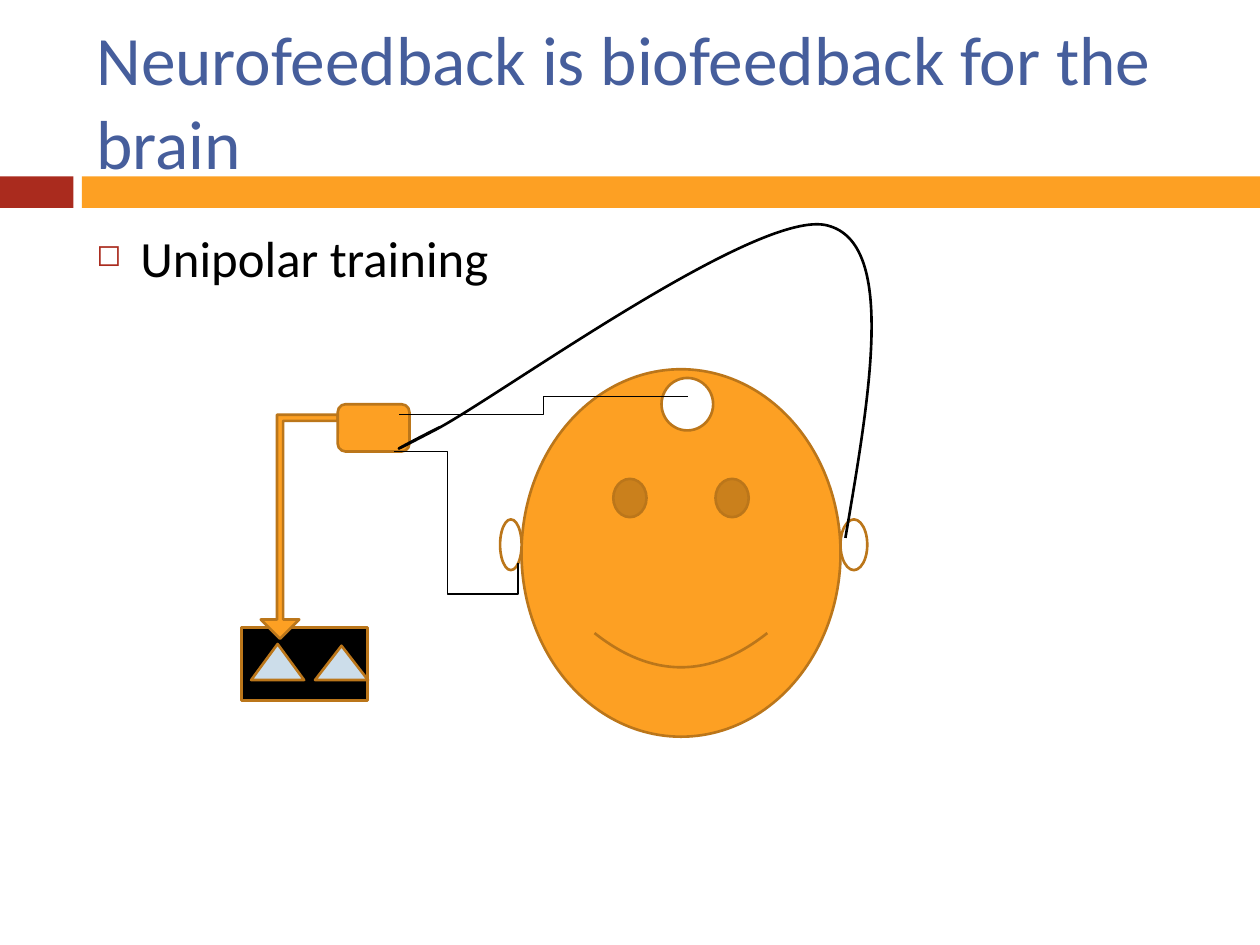
from dataclasses import dataclass

from lxml import etree
from pptx import Presentation
from pptx.dml.color import RGBColor
from pptx.enum.shapes import MSO_CONNECTOR, MSO_SHAPE
from pptx.enum.text import MSO_ANCHOR, PP_ALIGN
from pptx.oxml.ns import qn
from pptx.util import Pt

RECT, OVAL, ROUND = MSO_SHAPE.RECTANGLE, MSO_SHAPE.OVAL, MSO_SHAPE.ROUNDED_RECTANGLE
TRIANGLE, SMILEY, BENT_ARROW = MSO_SHAPE.ISOSCELES_TRIANGLE, MSO_SHAPE.SMILEY_FACE, MSO_SHAPE.BENT_UP_ARROW
ELBOW = MSO_CONNECTOR.ELBOW
TOP, MIDDLE = MSO_ANCHOR.TOP, MSO_ANCHOR.MIDDLE
LEFT = PP_ALIGN.LEFT


@dataclass
class Theme:
    font: str = "Calibri"
    title: str = "465E9C"
    black: str = "000000"
    white: str = "FFFFFF"
    red: str = "AA2B1E"
    orange: str = "FDA023"
    outline: str = "BB761A"
    pale: str = "CCDDEA"
    title_size: float = 39.6
    body_size: float = 29
    stroke: float = 1.5
    wire: float = 0.79


def rgb(value):
    return RGBColor.from_string(value)


def sub(parent, tag, **attrs):
    return etree.SubElement(parent, qn(tag), {k: str(v) for k, v in attrs.items()})


class SlideBuilder:
    """Draws themed elements on one slide, with lengths in points."""

    def __init__(self, slide, theme):
        self.shapes, self.theme = slide.shapes, theme

    def shape(self, kind, box, fill, outline=True, rotation=0, adj=()):
        s = self.shapes.add_shape(kind, *map(Pt, box))
        s.shadow.inherit = False
        s.rotation = rotation
        for i, value in enumerate(adj):
            s.adjustments[i] = value
        s.fill.solid()
        s.fill.fore_color.rgb = rgb(fill)
        if outline:
            self.stroke(s, self.theme.outline, self.theme.stroke)
        else:
            s.line.fill.background()
        return s

    def stroke(self, s, color, width):
        s.line.color.rgb = rgb(color)
        s.line.width = Pt(width)

    def text(self, box, text, size, color, anchor=TOP):
        tf = self.shapes.add_textbox(*map(Pt, box)).text_frame
        for name, value in {"word_wrap": True, "vertical_anchor": anchor}.items():
            setattr(tf, name, value)
        p = tf.paragraphs[0]
        p.alignment = LEFT
        r = p.add_run()
        r.text = text
        for name, value in {"name": self.theme.font, "size": Pt(size)}.items():
            setattr(r.font, name, value)
        r.font.color.rgb = rgb(color)
        return p

    def bullet(self, box, text, indent=25.2):
        p = self.text(box, text, self.theme.body_size, self.theme.black)
        p.space_before = Pt(7)
        props = p._p.get_or_add_pPr()
        props.set("marL", str(Pt(indent)))
        props.set("indent", str(-Pt(indent)))
        sub(sub(props, "a:buClr"), "a:srgbClr", val=self.theme.red)
        sub(props, "a:buSzPct", val=60000)
        sub(props, "a:buChar", char="◻")

    def wire(self, start, end, preset, *adj):
        s = self.shapes.add_connector(ELBOW, *map(Pt, start + end))
        self.stroke(s, self.theme.black, self.theme.wire)
        props = s._element.spPr
        sub(props, "a:effectLst")
        geom = props.find(qn("a:prstGeom"))
        geom.set("prst", preset)
        guides = geom.find(qn("a:avLst"))
        for i, value in enumerate(adj, 1):
            sub(guides, "a:gd", name=f"adj{i}", fmla=f"val {round(value * 100000)}")

    def curve(self, box, start, segments):
        x, y, w, h = map(Pt, box)
        fb = self.shapes.build_freeform(x, y)
        fb.add_line_segments([(x + w, y + h)], close=False)
        s = fb.convert_to_shape()
        s.shadow.inherit = False
        s.fill.background()
        self.stroke(s, self.theme.black, self.theme.stroke)
        outline = next(s._element.iter(qn("a:path")))
        for step in list(outline):
            outline.remove(step)
        for tag, points in [("a:moveTo", [start])] + [("a:cubicBezTo", seg) for seg in segments]:
            step = sub(outline, tag)
            for px, py in points:
                sub(step, "a:pt", x=Pt(px) - x, y=Pt(py) - y)


def main():
    prs = Presentation()
    prs.slide_width, prs.slide_height = Pt(720), Pt(540)
    t = Theme()
    b = SlideBuilder(prs.slides.add_slide(prs.slide_layouts[6]), t)

    b.shape(RECT, (0, 100.8, 42, 18), t.red, outline=False)
    b.shape(RECT, (46.8, 100.8, 673.2, 18), t.orange, outline=False)
    b.text((48, 18, 642, 78), "Neurofeedback is biofeedback for the brain", t.title_size, t.title, MIDDLE)
    b.bullet((48, 126, 642, 354), "Unipolar training")

    b.shape(SMILEY, (298, 211, 182.3, 210), t.orange)
    b.shape(OVAL, (285.8, 296.8, 12.3, 29), t.white)
    b.shape(RECT, (138, 358.6, 72, 41.6), t.black)
    b.shape(OVAL, (480.3, 296.8, 15.3, 29), t.white)
    b.shape(OVAL, (378, 216, 29.5, 30), t.white)
    b.shape(TRIANGLE, (143.5, 368, 30.3, 20.6), t.pale)
    b.shape(TRIANGLE, (180, 369, 30.3, 19.6), t.pale)
    b.shape(BENT_ARROW, (149, 237, 44, 128), t.orange, rotation=180, adj=(0.08, 0.25, 0.25))
    b.shape(ROUND, (193, 231, 41, 27), t.orange)

    b.wire((225, 258), (296, 321.6), "bentConnector4", 0.43, 1.28)
    b.wire((228.2, 237), (393, 226.6), "bentConnector3", 0.5)
    b.curve((228.2, 128, 270, 179.3), (483.1, 307.4), [
        [(497.5, 223.2), (511.9, 139), (473, 128.9)],
        [(434.2, 118.1), (285.8, 226.1), (249.1, 245.5)],
        [(211.7, 265), (231.1, 254.2), (251.3, 244.1)],
    ])
    prs.save("out.pptx")


if __name__ == "__main__":
    main()
